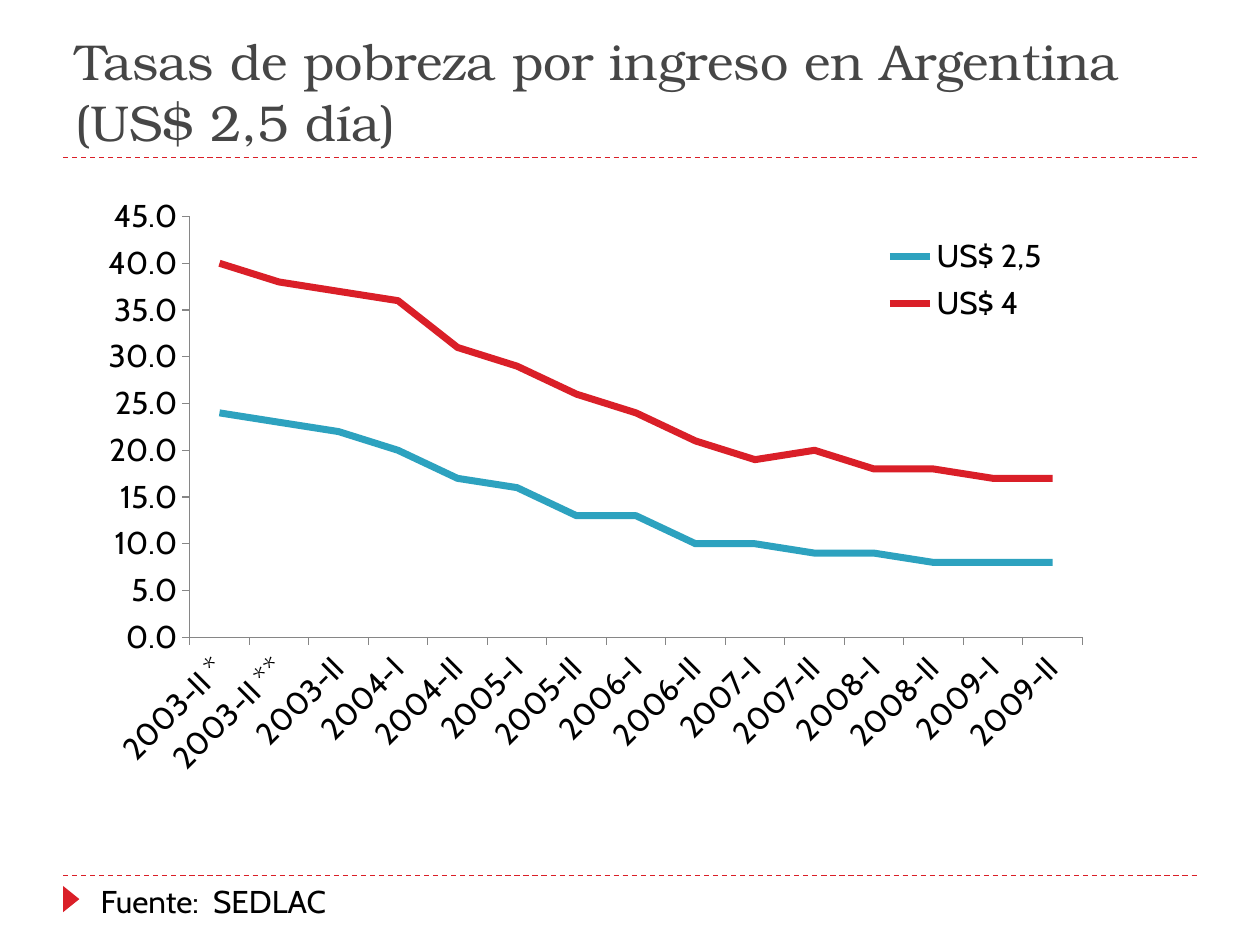
from dataclasses import dataclass

from lxml.etree import SubElement
from pptx import Presentation
from pptx.chart.data import CategoryChartData as ChartData
from pptx.dml.color import RGBColor as RGB
from pptx.enum.chart import XL_CHART_TYPE as Kind
from pptx.enum.chart import XL_LEGEND_POSITION as Side
from pptx.enum.chart import XL_TICK_MARK as Tick
from pptx.enum.dml import MSO_LINE as Dash
from pptx.enum.shapes import MSO_CONNECTOR as Conn
from pptx.enum.shapes import MSO_SHAPE as Shape
from pptx.enum.text import MSO_ANCHOR as Anchor
from pptx.oxml.ns import qn
from pptx.util import Cm, Pt


@dataclass(frozen=True)
class Theme:
    red: RGB = RGB(0xDA, 0x1F, 0x28)
    blue: RGB = RGB(0x2D, 0xA2, 0xBF)
    gray: RGB = RGB(0x46, 0x46, 0x46)
    axis: RGB = RGB(0x86, 0x86, 0x86)
    black: RGB = RGB(0, 0, 0)
    head: str = "TeX Gyre Bonum"
    body: str = "Cabin"
    big: float = 28.8
    small: float = 18


@dataclass(frozen=True)
class Box:
    x: float
    y: float
    w: float
    h: float

    def cm(self) -> tuple:
        return Cm(self.x), Cm(self.y), Cm(self.w), Cm(self.h)


@dataclass(frozen=True)
class Label:
    text: str
    box: Box
    font: str
    size: float
    color: RGB
    anchor: Anchor


@dataclass(frozen=True)
class Series:
    name: str
    vals: tuple
    color: RGB


T = Theme()
LEFT, RIGHT = 1.27, 24.13
RULES = (3.18, 17.65)

LABELS = (
    Label("Tasas de pobreza por ingreso en Argentina (US$ 2,5 día)",
          Box(LEFT, 0.43, RIGHT - LEFT, 2.75), T.head, T.big, T.gray, Anchor.BOTTOM),
    Label("Fuente:  SEDLAC",
          Box(1.78, 17.65, 9.53, 1.03), T.body, T.small, T.black, Anchor.TOP),
)

TERMS = ["2003-II *", "2003-II **", "2003-II"] + [
    f"{year}-{half}" for year in range(2004, 2010) for half in ("I", "II")
]
SERIES = (
    Series("US$ 2,5", (24, 23, 22, 20, 17, 16, 13, 13, 10, 10, 9, 9, 8, 8, 8), T.blue),
    Series("US$ 4", (40, 38, 37, 36, 31, 29, 26, 24, 21, 19, 20, 18, 18, 17, 17), T.red),
)


def set_font(font, name: str, size: float, color: RGB) -> None:
    font.name, font.size, font.bold = name, Pt(size), False
    font.color.rgb = color


def add_rule(slide, y: float) -> None:
    rule = slide.shapes.add_connector(Conn.STRAIGHT, Cm(LEFT), Cm(y), Cm(RIGHT), Cm(y))
    rule._element.remove(rule._element.find(qn("p:style")))
    rule.line.fill.solid()
    rule.line.fill.fore_color.rgb = T.red
    rule.line.width = Pt(0.75)
    rule.line.dash_style = Dash.DASH
    SubElement(rule._element.spPr, qn("a:effectLst"))


def add_mark(slide, box: Box) -> None:
    mark = slide.shapes.add_shape(Shape.ISOSCELES_TRIANGLE, *box.cm())
    mark.rotation = 90
    mark.shadow.inherit = False
    mark.fill.solid()
    mark.fill.fore_color.rgb = T.red
    mark.line.fill.background()


def add_label(slide, label: Label) -> None:
    frame = slide.shapes.add_textbox(*label.box.cm()).text_frame
    frame.word_wrap = True
    frame.vertical_anchor = label.anchor
    par = frame.paragraphs[0]
    par.text = label.text
    set_font(par.font, label.font, label.size, label.color)


def place(part, box: Box, inner: bool = False) -> None:
    """Fix a chart part at fractions of the chart area."""
    old = part.find(qn("c:layout"))
    if old is not None:
        part.remove(old)
    layout = SubElement(part, qn("c:layout"))
    if part.tag == qn("c:plotArea"):
        part.insert(0, layout)
    else:
        part.find(qn("c:legendPos")).addnext(layout)
    manual = SubElement(layout, qn("c:manualLayout"))
    rows = [("layoutTarget", "inner")] if inner else []
    rows += [("xMode", "edge"), ("yMode", "edge")]
    rows += [(key, str(getattr(box, key))) for key in "xywh"]
    for key, val in rows:
        SubElement(manual, qn(f"c:{key}")).set("val", val)


def add_lines(slide, box: Box) -> None:
    data = ChartData(number_format="0.0")
    data.categories = TERMS
    for item in SERIES:
        data.add_series(item.name, item.vals)
    chart = slide.shapes.add_chart(Kind.LINE, *box.cm(), data).chart
    chart.has_title = False
    set_font(chart.font, T.body, T.small, T.black)

    # Lines
    plot = chart.plots[0]
    plot.vary_by_categories = False
    for line, item in zip(plot.series, SERIES):
        line.smooth = False
        line.format.line.color.rgb = item.color
        line.format.line.width = Pt(4)

    # Axes
    cat, val = chart.category_axis, chart.value_axis
    for axis in (cat, val):
        axis.has_major_gridlines = False
        axis.major_tick_mark = Tick.OUTSIDE
        axis.minor_tick_mark = Tick.NONE
        axis.format.line.color.rgb = T.axis
        axis.format.line.width = Pt(0.75)
        set_font(axis.tick_labels.font, T.body, T.small, T.black)
    cat._element.find(qn("c:txPr")).find(qn("a:bodyPr")).set("rot", "-2700000")
    val.minimum_scale, val.maximum_scale, val.major_unit = 0, 45, 5
    val.tick_labels.number_format = "0.0"
    val.tick_labels.number_format_is_linked = False

    # Legend and plot area
    chart.has_legend = True
    legend = chart.legend
    legend.position = Side.RIGHT
    legend.include_in_layout = True
    set_font(legend.font, T.body, T.small, T.black)
    place(legend._element, Box(0.78, 0.07, 0.17, 0.17))
    place(chart._chartSpace.chart.plotArea, Box(0.1, 0.05, 0.88, 0.7), inner=True)


def main() -> None:
    deck = Presentation()
    deck.slide_width, deck.slide_height = Cm(25.4), Cm(19.05)
    slide = deck.slides.add_slide(deck.slide_layouts[6])

    # Frame
    for y in RULES:
        add_rule(slide, y)
    add_mark(slide, Box(1.17, 17.96, 0.53, 0.33))

    # Content
    add_lines(slide, Box(1.78, 3.76, 20.45, 12.12))
    for label in LABELS:
        add_label(slide, label)
    deck.save("out.pptx")


if __name__ == "__main__":
    main()
